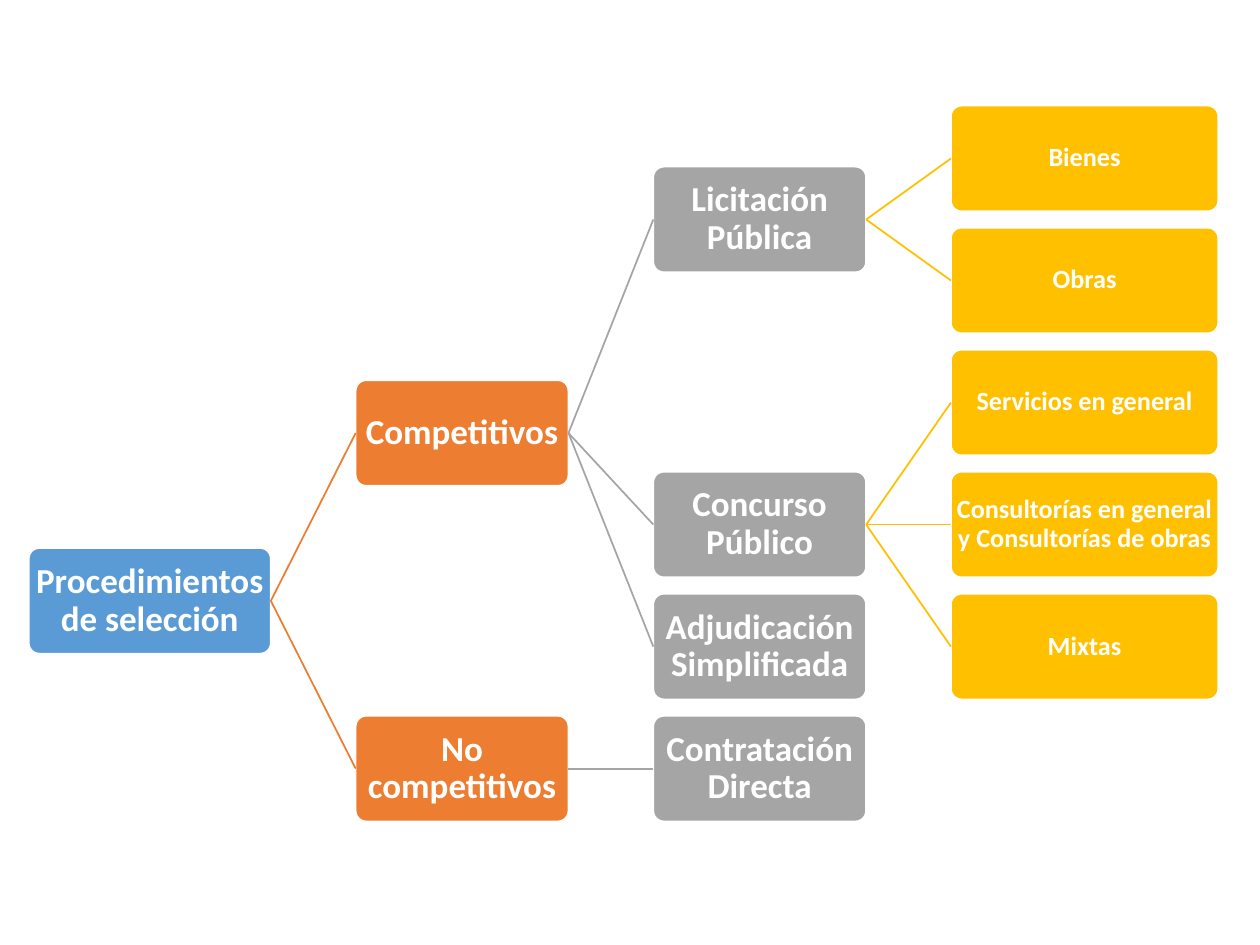
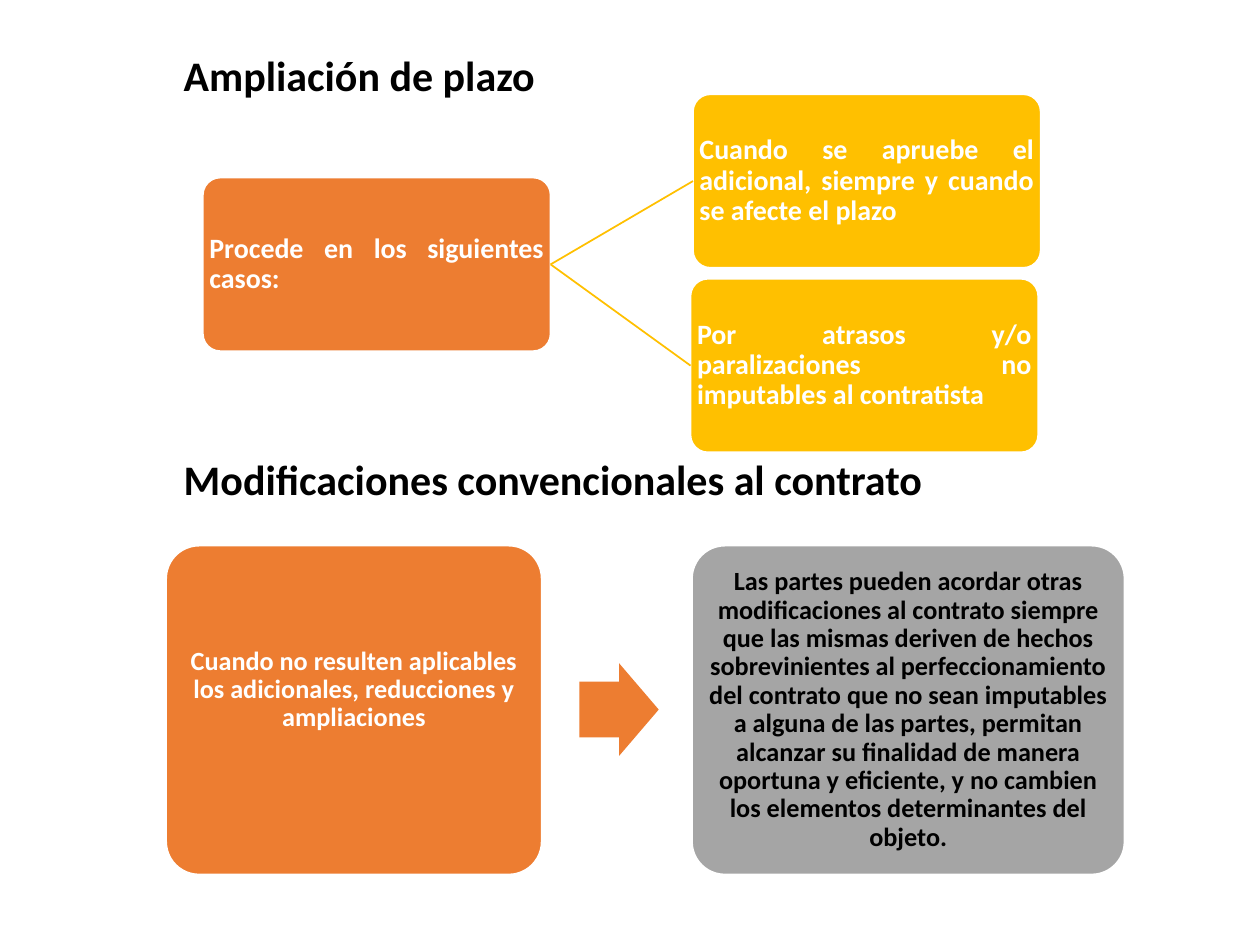
from dataclasses import dataclass
from typing import Optional

from lxml import etree
from pptx import Presentation
from pptx import util as u
from pptx.dml import color
from pptx.enum import shapes, text
from pptx.oxml import ns
from pptx.shapes.autoshape import Shape
from pptx.slide import Slide
from pptx.text.text import TextFrame

Cm = u.Cm
ALIGN = text.PP_ALIGN
ANCHOR = text.MSO_ANCHOR
KIND = shapes.MSO_SHAPE


@dataclass(frozen=True)
class Theme:
    font: str = "Calibri"
    blue: str = "5B9BD5"
    orange: str = "ED7D31"
    gray: str = "A5A5A5"
    gold: str = "FFC000"
    white: str = "FFFFFF"
    black: str = "000000"
    heading: int = 24
    branch: int = 20
    case: int = 16
    leaf: int = 15
    line: int = 1
    tight: float = 0.03
    loose: float = 0.15


@dataclass(frozen=True)
class Box:
    left: float
    top: float
    width: float
    height: float


@dataclass(frozen=True)
class Node:
    label: str
    children: tuple["Node", ...] = ()
    leaf_row: float = 0

    @property
    def row(self) -> float:
        if not self.children:
            return self.leaf_row
        return (self.children[0].row + self.children[-1].row) / 2


@dataclass(frozen=True)
class Level:
    left: float
    width: float
    fill: str
    size: int


T = Theme()
ROW_TOP, ROW_PITCH, ROW_HEIGHT = 2.13, 2.46, 2.13
LEVELS = (
    Level(0.58, 4.88, T.blue, T.branch),
    Level(7.17, 4.29, T.orange, T.branch),
    Level(13.17, 4.29, T.gray, T.branch),
    Level(19.17, 5.39, T.gold, T.leaf),
)
PROCEDURES = Node("Procedimientos de selección", (
    Node("Competitivos", (
        Node("Licitación Pública", (
            Node("Bienes", leaf_row=0),
            Node("Obras", leaf_row=1),
        )),
        Node("Concurso Público", (
            Node("Servicios en general", leaf_row=2),
            Node("Consultorías en general y Consultorías de obras", leaf_row=3),
            Node("Mixtas", leaf_row=4),
        )),
        Node("Adjudicación Simplificada", leaf_row=4),
    )),
    Node("No competitivos", (
        Node("Contratación Directa", leaf_row=5),
    )),
))


def rgb(value: str) -> color.RGBColor:
    return color.RGBColor.from_string(value)


def write(tf: TextFrame, words: str, *, size: int, ink: str = T.white,
          align: ALIGN = ALIGN.CENTER, anchor: ANCHOR = ANCHOR.MIDDLE,
          spacing: float = 0.9, inset: Optional[float] = None,
          bottom: Optional[float] = None) -> None:
    tf.word_wrap = True
    tf.auto_size = text.MSO_AUTO_SIZE.NONE
    tf.vertical_anchor = anchor
    if inset is not None:
        tf.margin_left = tf.margin_right = tf.margin_top = Cm(inset)
        tf.margin_bottom = Cm(inset if bottom is None else bottom)
    p = tf.paragraphs[0]
    p.alignment = align
    p.line_spacing = spacing
    p.space_before = u.Pt(0)
    r = p.add_run()
    r.text = words
    r.font.name = T.font
    r.font.size = u.Pt(size)
    r.font.bold = True
    r.font.color.rgb = rgb(ink)


def add_block(s: Slide, box: Box, fill: str, kind: KIND = KIND.ROUNDED_RECTANGLE,
              adjustments: tuple[float, ...] = (0.1,)) -> Shape:
    sp = s.shapes.add_shape(kind, Cm(box.left), Cm(box.top), Cm(box.width), Cm(box.height))
    sp.shadow.inherit = False
    for i, value in enumerate(adjustments):
        sp.adjustments[i] = value
    sp.fill.solid()
    sp.fill.fore_color.rgb = rgb(fill)
    if kind == KIND.ROUNDED_RECTANGLE:
        sp.line.color.rgb = rgb(T.white)
        sp.line.width = u.Pt(T.line)
    else:
        sp.line.fill.background()
    return sp


def add_link(s: Slide, start: Shape, end: Shape, ink: str) -> None:
    link = s.shapes.add_connector(shapes.MSO_CONNECTOR.STRAIGHT, 0, 0, 0, 0)
    link.begin_connect(start, 3)
    link.end_connect(end, 1)
    link.line.color.rgb = rgb(ink)
    link.line.width = u.Pt(T.line)
    etree.SubElement(link._element.spPr, ns.qn("a:effectLst"))


def add_heading(sp: Shape, box: Box, words: str, spacing: float) -> None:
    sp.left, sp.top = Cm(box.left), Cm(box.top)
    sp.width, sp.height = Cm(box.width), Cm(box.height)
    pPr = sp.text_frame.paragraphs[0]._p.get_or_add_pPr()
    pPr.set("marL", "0")
    pPr.set("indent", "0")
    etree.SubElement(pPr, ns.qn("a:buNone"))
    write(sp.text_frame, words, size=T.heading, ink=T.black, align=ALIGN.LEFT,
          anchor=ANCHOR.TOP, spacing=spacing)


def add_tree(s: Slide, node: Node, depth: int = 0) -> Shape:
    level = LEVELS[depth]
    top = ROW_TOP + node.row * ROW_PITCH
    sp = add_block(s, Box(level.left, top, level.width, ROW_HEIGHT), level.fill)
    write(sp.text_frame, node.label, size=level.size, inset=T.tight)
    for child in node.children:
        add_link(s, sp, add_tree(s, child, depth + 1), LEVELS[depth + 1].fill)
    return sp


def add_case(s: Slide, left: float, top: float, fill: str, words: str) -> Shape:
    sp = add_block(s, Box(left, top, 7.01, 3.5), fill)
    write(sp.text_frame, words, size=T.case, align=ALIGN.JUSTIFY, inset=T.tight)
    return sp


def build_procedures(prs: Presentation) -> None:
    s = prs.slides.add_slide(prs.slide_layouts[6])
    add_tree(s, PROCEDURES)


def build_changes(prs: Presentation) -> None:
    s = prs.slides.add_slide(prs.slide_layouts[1])
    add_heading(s.shapes.title, Box(3.45, 1.07, 7.87, 1.14), "Ampliación de plazo", 0.8)
    add_heading(s.placeholders[1], Box(3.45, 9.12, 19.08, 1.14),
                "Modificaciones convencionales al contrato", 0.9)

    root = add_case(s, 4.09, 3.58, T.orange, "Procede en los siguientes casos:")
    cases = (
        (13.97, 1.9, "Cuando se apruebe el adicional, siempre y cuando se afecte el plazo"),
        (13.92, 5.62, "Por atrasos y/o paralizaciones no imputables al contratista"),
    )
    for left, top, words in cases:
        add_link(s, root, add_case(s, left, top, T.gold, words), T.gold)

    condition = add_block(s, Box(3.35, 11, 7.57, 6.63), T.orange)
    write(condition.text_frame,
          "Cuando no resulten aplicables los adicionales, reducciones y ampliaciones",
          size=T.leaf, inset=T.loose, bottom=0.96)
    add_block(s, Box(11.68, 13.37, 1.6, 1.87), T.orange, KIND.RIGHT_ARROW, (0.6, 0.5))
    outcome = add_block(s, Box(13.95, 11, 8.72, 6.63), T.gray)
    write(outcome.text_frame,
          "Las partes pueden acordar otras modificaciones al contrato siempre que las "
          "mismas deriven de hechos sobrevinientes al perfeccionamiento del contrato que "
          "no sean imputables a alguna de las partes, permitan alcanzar su finalidad de "
          "manera oportuna y eficiente, y no cambien los elementos determinantes del objeto.",
          size=T.leaf, ink=T.black, inset=T.loose)


def main() -> None:
    prs = Presentation()
    prs.slide_width, prs.slide_height = Cm(25.4), Cm(19.05)
    build_procedures(prs)
    build_changes(prs)
    prs.save("out.pptx")


if __name__ == "__main__":
    main()
